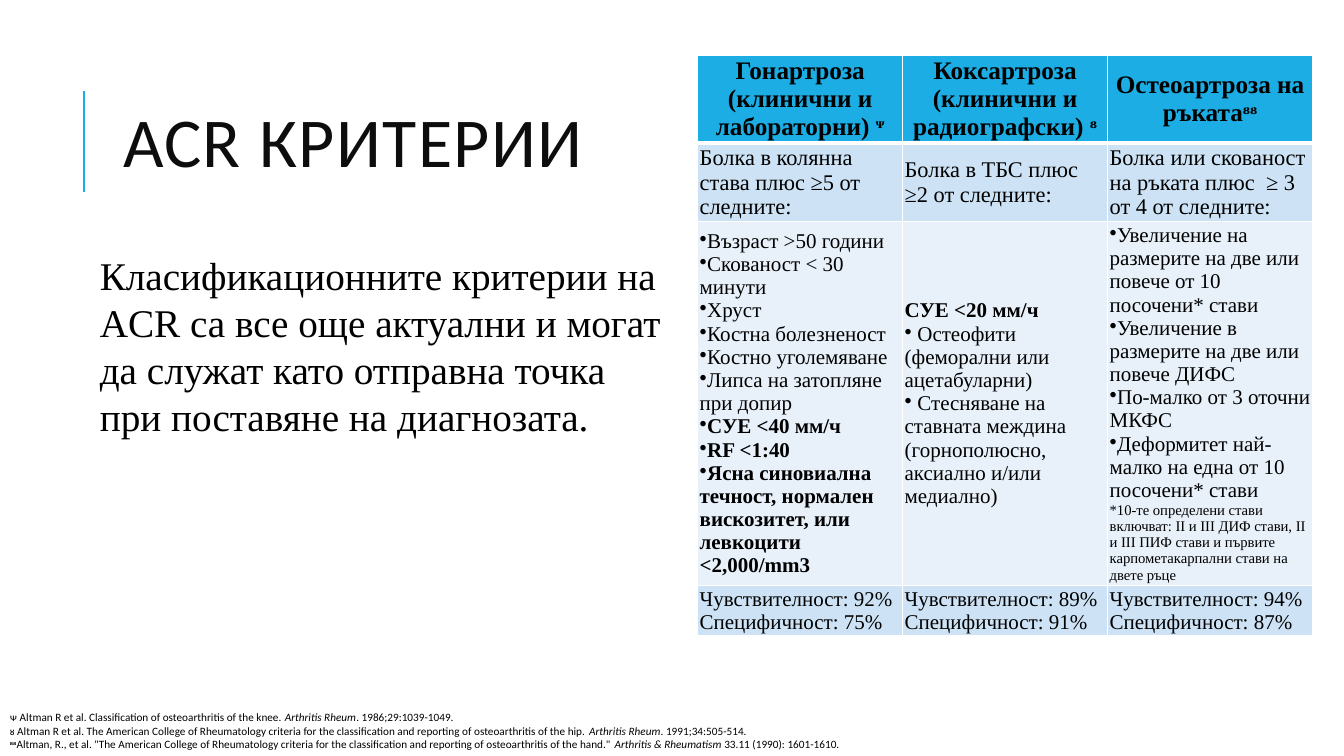
import pptx
import pptx.util
import pptx.dml.color
import pptx.enum.shapes
import pptx.enum.text
import pptx.oxml
import pptx.oxml.ns
from lxml import etree

WIDTH, HEIGHT = 13.33, 7.5
SERIF, SANS = "Times New Roman", "Calibri"
ACCENT, BAND_DARK, BAND_LIGHT = "1CADE4", "CDE3F5", "E8F1FA"

TITLE = "ACR КРИТЕРИИ"
BODY = ("Класификационните критерии на ACR са все още актуални и могат да служат "
        "като отправна точка при поставяне на диагнозата.")

# A paragraph is a list of (text, marks); marks: b bold, i italic, ^ superscript,
# * bullet, - small note
HEADERS = [
    [[("Гонартроза", "b")], [("(клинични и лабораторни) ", "b"), ("ᴪ", "b^")]],
    [[("Коксартроза", "b")], [("(клинични и радиографски) ", "b"), ("ᴕ", "b^")]],
    [[("Остеоартроза на ръката", "b"), ("ᴕᴕ", "b^")]],
]
ENTRY = [
    [[("Болка в колянна става плюс ≥5 от следните:", "")]],
    [[("Болка в ТБС плюс ≥2 от следните:", "")]],
    [[("Болка или скованост на ръката плюс  ≥ 3 от 4 от следните:", "")]],
]
CRITERIA = [
    [[("Възраст >50 години", "*")],
     [("Скованост < 30 минути", "*")],
     [("Хруст", "*")],
     [("Костна болезненост", "*")],
     [("Костно уголемяване", "*")],
     [("Липса на затопляне при допир", "*")],
     [("СУЕ <40 мм/ч", "*b")],
     [("RF <1:40", "*b")],
     [("Ясна синовиална течност, нормален вискозитет, или левкоцити <2,000/mm3", "*b")]],
    [[("СУЕ <20 мм/ч", "b")],
     [(" Остеофити (феморални или ацетабуларни)", "*")],
     [(" Стесняване на ставната междина (горнополюсно, аксиално и/или медиално)", "*")]],
    [[("Увеличение на размерите на две или повече от 10 посочени* стави", "*")],
     [("Увеличение в размерите на две или повече ДИФС", "*")],
     [("По-малко от 3 оточни МКФС", "*")],
     [("Деформитет най-малко на една от 10 посочени* стави", "*")],
     [("*10-те определени стави включват: II и III ДИФ стави, II и III ПИФ стави "
       "и първите карпометакарпални стави на двете ръце", "-")]],
]
ACCURACY = [
    [[(f"Чувствителност: {sens}%", "")], [(f"Специфичност: {specif}%", "")]]
    for sens, specif in [(92, 75), (89, 91), (94, 87)]
]
# cells, height, text size, fill, bottom border
ROWS = [
    (HEADERS, 0.87, 18, ACCENT, 3),
    (ENTRY, 0.78, 16, BAND_DARK, 1),
    (CRITERIA, 3.6, 15, BAND_LIGHT, 1),
    (ACCURACY, 0.5, 15, BAND_DARK, 1),
]
REFERENCES = [
    [("ᴪ Altman R et al. Classification of osteoarthritis of the knee. ", ""),
     ("Arthritis Rheum", "i"), (". 1986;29:1039-1049.", "")],
    [("ᴕ Altman R et al. The American College of Rheumatology criteria for the "
      "classification and reporting of osteoarthritis of the hip.", ""),
     (" Arthritis Rheum", "i"), (". 1991;34:505-514.", "")],
    [("ᴕᴕ", "b^"),
     ("Altman, R., et al. \"The American College of Rheumatology criteria for the "
      "classification and reporting of osteoarthritis of the hand.\" ", ""),
     ("Arthritis & Rheumatism", "i"), (" 33.11 (1990): 1601-1610.", "")],
]

inch, pt = pptx.util.Inches, pptx.util.Pt
ALIGN, ANCHOR = pptx.enum.text.PP_ALIGN, pptx.enum.text.MSO_ANCHOR
AUTO_SIZE = pptx.enum.text.MSO_AUTO_SIZE


def rgb(value):
    return pptx.dml.color.RGBColor.from_string(value)


def sub(parent, tag, **attrs):
    return etree.SubElement(parent, pptx.oxml.ns.qn(tag), attrs)


def place(s, left, top, width, height):
    s.left, s.top, s.width, s.height = map(inch, (left, top, width, height))


def write(tf, paragraphs, size, font, color="000000", align=ALIGN.LEFT):
    for i, parts in enumerate(paragraphs):
        p = tf.add_paragraph() if i else tf.paragraphs[0]
        p.alignment = align
        p.space_before = pt(0)
        if "*" in parts[0][1]:
            sub(p._p.get_or_add_pPr(), "a:buChar", char="•")
        for text, marks in parts:
            r = p.add_run()
            r.text = text
            r.font.size = pt(10.5 if "-" in marks else size)
            r.font.name = SERIF if "^" in marks else font
            r.font.bold = "b" in marks
            r.font.italic = "i" in marks
            r.font.color.rgb = rgb(color)
            if "^" in marks:
                r.font._element.set("baseline", "30000")


def draw_borders(cell, bottom):
    tc_pr = cell._tc.get_or_add_tcPr()
    for i, (side, width) in enumerate([("L", 1), ("R", 1), ("T", 1), ("B", bottom)]):
        ln = sub(tc_pr, f"a:ln{side}", w=str(pt(width)))
        sub(sub(ln, "a:solidFill"), "a:srgbClr", val="FFFFFF")
        tc_pr.insert(i, ln)


def add_criteria_table(slide, left, top, width):
    height = sum(row[1] for row in ROWS)
    table = slide.shapes.add_table(len(ROWS), len(HEADERS), inch(left), inch(top),
                                   inch(width), inch(height)).table
    for i, (cells, row_height, size, fill, bottom) in enumerate(ROWS):
        table.rows[i].height = inch(row_height)
        for j, paragraphs in enumerate(cells):
            cell = table.cell(i, j)
            cell.margin_left = cell.margin_right = inch(0.02)
            cell.margin_top = cell.margin_bottom = inch(0.02)
            cell.vertical_anchor = ANCHOR.MIDDLE
            cell.fill.solid()
            cell.fill.fore_color.rgb = rgb(fill)
            draw_borders(cell, bottom)
            write(cell.text_frame, paragraphs, size, SERIF,
                  align=ALIGN.LEFT if i else ALIGN.CENTER)


def main():
    prs = pptx.Presentation()
    prs.slide_width, prs.slide_height = inch(WIDTH), inch(HEIGHT)
    slide = prs.slides.add_slide(prs.slide_layouts[1])

    rule = slide.shapes.add_connector(pptx.enum.shapes.MSO_CONNECTOR.STRAIGHT,
                                      inch(0.83), inch(1.9), inch(0.83), inch(0.9))
    rule.line.color.rgb = rgb(ACCENT)
    rule.line.width = pt(1.5)
    sub(rule._element.spPr, "a:effectLst")

    title, body = slide.placeholders
    place(title, 1.12, 0.64, 10.63, 1.64)
    tf = title.text_frame
    tf.auto_size = AUTO_SIZE.NONE
    tf.vertical_anchor = ANCHOR.MIDDLE
    write(tf, [[(TITLE, "")]], 50, SANS, "0D0D0D")
    tf.paragraphs[0].line_spacing = 0.8
    tf.paragraphs[0].runs[0].font._element.set("spc", "100")

    place(body, 0.89, 2.44, 5.86, 1.99)
    tf = body.text_frame
    tf.auto_size = AUTO_SIZE.NONE
    write(tf, [[(BODY, "")]], 28, SERIF)
    p_pr = tf.paragraphs[0]._p.get_or_add_pPr()
    p_pr.set("marL", "0")
    p_pr.set("indent", "0")
    sub(p_pr, "a:buNone")

    add_criteria_table(slide, 6.92, 0.55, 6.1)

    notes = slide.shapes.add_textbox(0, inch(7), inch(9.45), inch(0.5))
    notes.text_frame.word_wrap = True
    write(notes.text_frame, REFERENCES, 8, SANS)

    prs.save("out.pptx")


if __name__ == "__main__":
    main()
